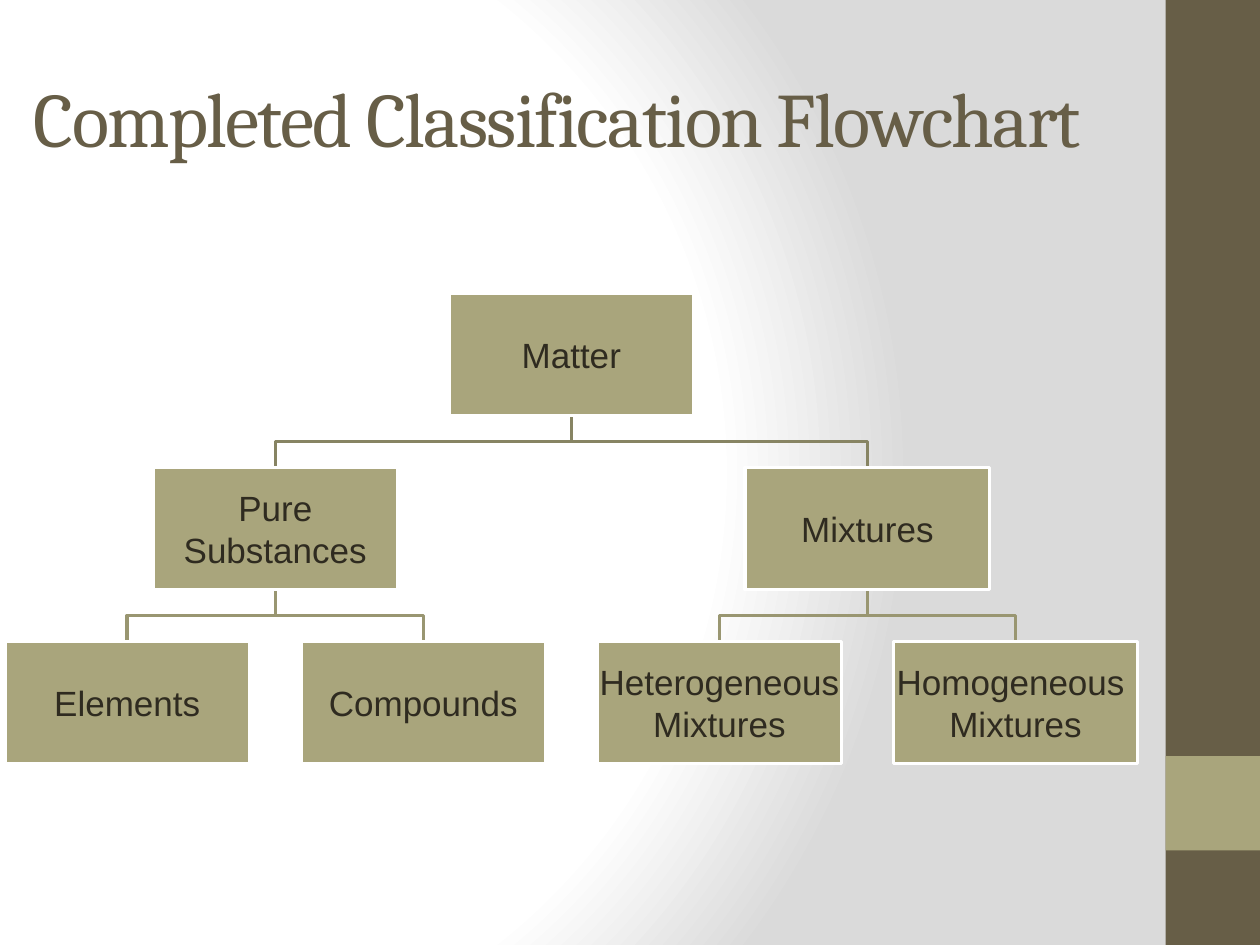
import pptx
import pptx.dml.color
import pptx.enum.shapes
import pptx.enum.text
import pptx.oxml
import pptx.oxml.ns
import pptx.util
from pptx.util import Inches

BROWN, OLIVE, WHITE, INK = "675E47", "A9A57C", "FFFFFF", "2F2B20"
BOX_WIDTH, BOX_HEIGHT = 1.94, 0.97
FIRST_CENTER, COLUMN_STEP = 1.01, 2.35
FIRST_TOP, ROW_STEP = 2.33, 1.38
LINE_COLORS = ["878463", "999671"]

# name: (lines, column, row, parent)
NODES = {
    "matter": (["Matter"], 1.5, 0, None),
    "pure": (["Pure Substances"], 0.5, 1, "matter"),
    "elements": (["Elements"], 0, 2, "pure"),
    "compounds": (["Compounds"], 1, 2, "pure"),
    "mixtures": (["Mixtures"], 2.5, 1, "matter"),
    "heterogeneous": (["Heterogeneous ", "Mixtures"], 2, 2, "mixtures"),
    "homogeneous": (["Homogeneous ", "Mixtures"], 3, 2, "mixtures"),
}


def color(value):
    return pptx.dml.color.RGBColor.from_string(value)


def center_and_top(name):
    _, column, row, _ = NODES[name]
    return FIRST_CENTER + column * COLUMN_STEP, FIRST_TOP + row * ROW_STEP


class FlowchartSlide:
    def __init__(self, slide):
        self.slide = slide

    def background(self, stops):
        """Fill the background with a circular gradient centred left of the middle."""
        stop_xml = "".join(
            f'<a:gs pos="{percent * 1000}"><a:srgbClr val="{value}"/></a:gs>'
            for percent, value in stops)
        background = pptx.oxml.parse_xml(
            f'<p:bg {pptx.oxml.ns.nsdecls("p", "a")}><p:bgPr>'
            f'<a:gradFill rotWithShape="1"><a:gsLst>{stop_xml}</a:gsLst>'
            '<a:path path="circle">'
            '<a:fillToRect l="20000" t="50000" r="100000" b="50000"/></a:path>'
            '</a:gradFill><a:effectLst/></p:bgPr></p:bg>')
        self.slide.element.cSld.insert(0, background)

    def rectangle(self, left, top, width, height, fill, line=None):
        shape = self.slide.shapes.add_shape(
            pptx.enum.shapes.MSO_SHAPE.RECTANGLE,
            Inches(left), Inches(top), Inches(width), Inches(height))
        shape.shadow.inherit = False
        shape.fill.solid()
        shape.fill.fore_color.rgb = color(fill)
        if line:
            shape.line.color.rgb = color(line)
            shape.line.width = pptx.util.Pt(2)
        else:
            shape.line.fill.background()
        return shape

    def add_text(self, shape, lines, size, font, ink, alignment):
        frame = shape.text_frame
        frame.word_wrap = True
        frame.vertical_anchor = pptx.enum.text.MSO_ANCHOR.MIDDLE
        for index, line in enumerate(lines):
            paragraph = frame.add_paragraph() if index else frame.paragraphs[0]
            paragraph.alignment = alignment
            run = paragraph.add_run()
            run.text = line
            run.font.size = pptx.util.Pt(size)
            run.font.name = font
            run.font.color.rgb = color(ink)
        return frame

    def title(self, text):
        box = self.slide.shapes.add_textbox(
            Inches(0.17), Inches(0.3), Inches(9), Inches(1.25))
        frame = self.add_text(box, [text], 44, "Cambria", BROWN,
                              pptx.enum.text.PP_ALIGN.LEFT)
        for run in frame.paragraphs[0].runs:
            run.font._element.set("spc", "-100")

    def node(self, name):
        center, top = center_and_top(name)
        shape = self.rectangle(center - BOX_WIDTH / 2, top, BOX_WIDTH, BOX_HEIGHT,
                               OLIVE, WHITE)
        frame = self.add_text(shape, NODES[name][0], 20, "Arial", INK,
                              pptx.enum.text.PP_ALIGN.CENTER)
        frame.margin_left = frame.margin_right = Inches(0.01)
        frame.margin_top = frame.margin_bottom = Inches(0.01)

    def branch(self, parent, child):
        """Draw the elbow line from a parent box down to its child box."""
        start, parent_top = center_and_top(parent)
        end, bottom = center_and_top(child)
        top = parent_top + BOX_HEIGHT
        middle = (top + bottom) / 2
        builder = self.slide.shapes.build_freeform(Inches(start), Inches(top))
        builder.add_line_segments(
            [(Inches(x), Inches(y))
             for x, y in [(start, middle), (end, middle), (end, bottom)]],
            close=False)
        shape = builder.convert_to_shape()
        shape.shadow.inherit = False
        shape.fill.background()
        shape.line.color.rgb = color(LINE_COLORS[NODES[parent][2]])
        shape.line.width = pptx.util.Pt(2)


def main():
    presentation = pptx.Presentation()
    presentation.slide_width = Inches(10)
    presentation.slide_height = Inches(7.5)
    flowchart = FlowchartSlide(
        presentation.slides.add_slide(presentation.slide_layouts[6]))
    flowchart.background([(0, WHITE), (75, WHITE), (100, "DADADA")])
    flowchart.rectangle(9.25, 0, 0.75, 7.5, BROWN)
    flowchart.rectangle(9.25, 6, 0.75, 0.75, OLIVE)
    flowchart.title("Completed Classification Flowchart")
    for name, (_, _, _, parent) in reversed(NODES.items()):
        if parent:
            flowchart.branch(parent, name)
    for name in NODES:
        flowchart.node(name)
    presentation.save("out.pptx")


if __name__ == "__main__":
    main()
